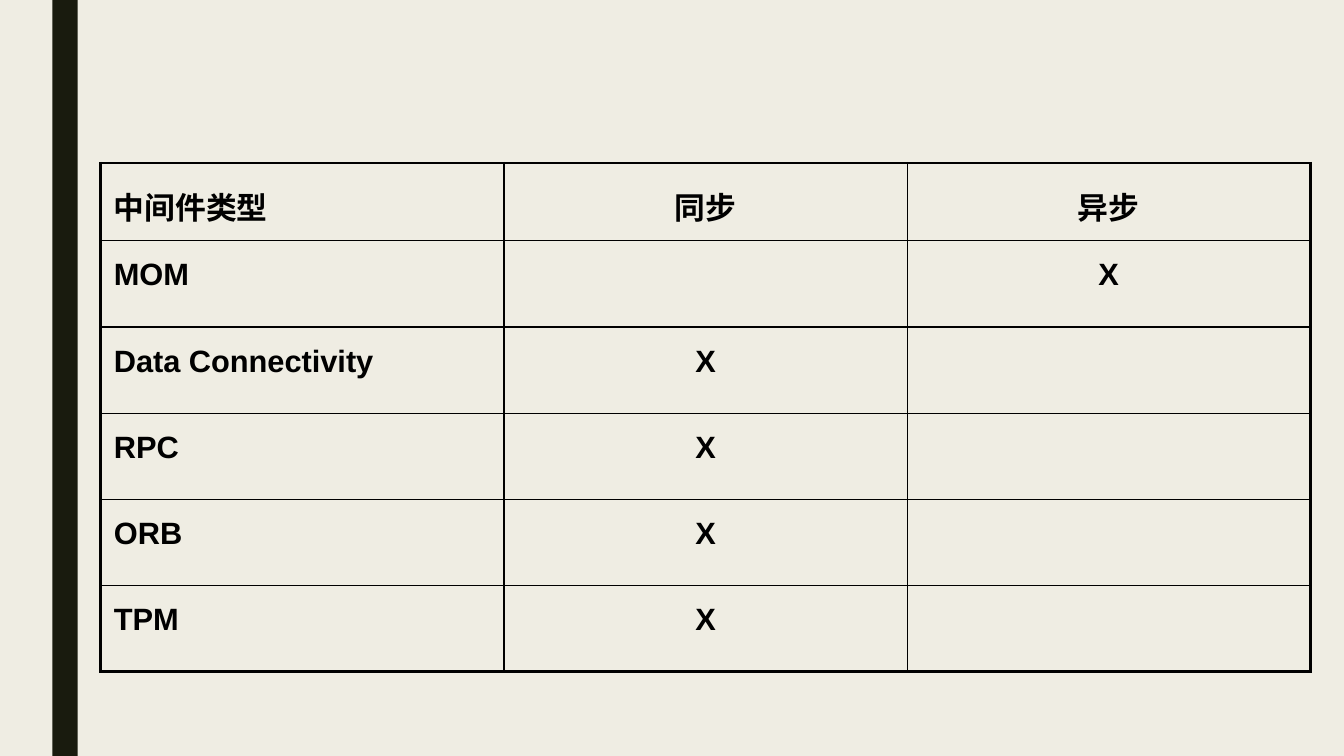
from dataclasses import dataclass

import lxml.etree
import pptx
import pptx.dml.color
import pptx.enum.shapes
import pptx.enum.text
import pptx.oxml.ns
import pptx.slide
import pptx.table
import pptx.util

COLORS = {"background": "EFEDE3", "side_bar": "191B0E", "ink": "000000"}
HEADINGS = ("中间件类型", "同步", "异步")
MARK = "X"
FONT_SIZE = 22
OUTER_LINE = 2.25
INNER_LINE = 1
COLUMN_WIDTH = 10.16
HEADING_HEIGHT = 1.96
ROW_HEIGHT = 2.17


@dataclass(frozen=True)
class Middleware:
    name: str
    synchronous: bool

    def texts(self) -> tuple[str, str, str]:
        if self.synchronous:
            return self.name, MARK, ""
        return self.name, "", MARK


MIDDLEWARE = (
    Middleware("MOM", False),
    Middleware("Data Connectivity", True),
    Middleware("RPC", True),
    Middleware("ORB", True),
    Middleware("TPM", True),
)


def rgb(color: str) -> pptx.dml.color.RGBColor:
    return pptx.dml.color.RGBColor.from_string(COLORS[color])


def draw_side_bar(slide: pptx.slide.Slide) -> None:
    side_bar = slide.shapes.add_shape(
        pptx.enum.shapes.MSO_SHAPE.RECTANGLE,
        pptx.util.Cm(1.32), 0, pptx.util.Cm(0.64), pptx.util.Cm(19.05),
    )
    side_bar.shadow.inherit = False
    side_bar.fill.solid()
    side_bar.fill.fore_color.rgb = rgb("side_bar")
    side_bar.line.fill.background()


def add_border(cell: pptx.table._Cell, side: str, width: float) -> None:
    qn = pptx.oxml.ns.qn
    properties = cell._tc.get_or_add_tcPr()
    border = lxml.etree.SubElement(properties, qn(f"a:ln{side}"), w=str(pptx.util.Pt(width)))
    fill = lxml.etree.SubElement(border, qn("a:solidFill"))
    lxml.etree.SubElement(fill, qn("a:srgbClr"), val=COLORS["ink"])


def format_cell(cell: pptx.table._Cell, text: str, centred: bool) -> None:
    cell.margin_left = cell.margin_right = pptx.util.Cm(0.33)
    cell.margin_top = cell.margin_bottom = pptx.util.Cm(0.13)
    cell.fill.background()
    if not text:
        return
    cell.text_frame.text = text
    paragraph = cell.text_frame.paragraphs[0]
    alignments = pptx.enum.text.PP_ALIGN
    paragraph.alignment = alignments.CENTER if centred else alignments.LEFT
    paragraph.line_spacing = 1.35
    paragraph.space_before = paragraph.space_after = pptx.util.Pt(0.15 * FONT_SIZE)
    font = paragraph.runs[0].font
    font.name = "Arial"
    font.size = pptx.util.Pt(FONT_SIZE)
    font.bold = True
    font.color.rgb = rgb("ink")


def draw_comparison(slide: pptx.slide.Slide) -> None:
    rows = [HEADINGS] + [middleware.texts() for middleware in MIDDLEWARE]
    heights = [HEADING_HEIGHT] + [ROW_HEIGHT] * len(MIDDLEWARE)
    last_row, last_column = len(rows) - 1, len(HEADINGS) - 1
    comparison = slide.shapes.add_table(
        len(rows), len(HEADINGS),
        pptx.util.Cm(2.54), pptx.util.Cm(4.11),
        pptx.util.Cm(COLUMN_WIDTH * len(HEADINGS)), pptx.util.Cm(sum(heights)),
    ).table
    comparison.first_row = False
    comparison.horz_banding = False
    for column in comparison.columns:
        column.width = pptx.util.Cm(COLUMN_WIDTH)
    for row_index, (texts, height) in enumerate(zip(rows, heights)):
        comparison.rows[row_index].height = pptx.util.Cm(height)
        for column_index, text in enumerate(texts):
            cell = comparison.cell(row_index, column_index)
            outer_sides = {
                "L": column_index == 0,
                "R": column_index == last_column,
                "T": row_index == 0,
                "B": row_index == last_row,
            }
            for side, is_outer in outer_sides.items():
                add_border(cell, side, OUTER_LINE if is_outer else INNER_LINE)
            format_cell(cell, text, centred=column_index > 0)


def main() -> None:
    presentation = pptx.Presentation()
    presentation.slide_width = pptx.util.Cm(33.87)
    presentation.slide_height = pptx.util.Cm(19.05)
    slide = presentation.slides.add_slide(presentation.slide_layouts[6])
    slide.background.fill.solid()
    slide.background.fill.fore_color.rgb = rgb("background")
    draw_side_bar(slide)
    draw_comparison(slide)
    presentation.save("out.pptx")


if __name__ == "__main__":
    main()
